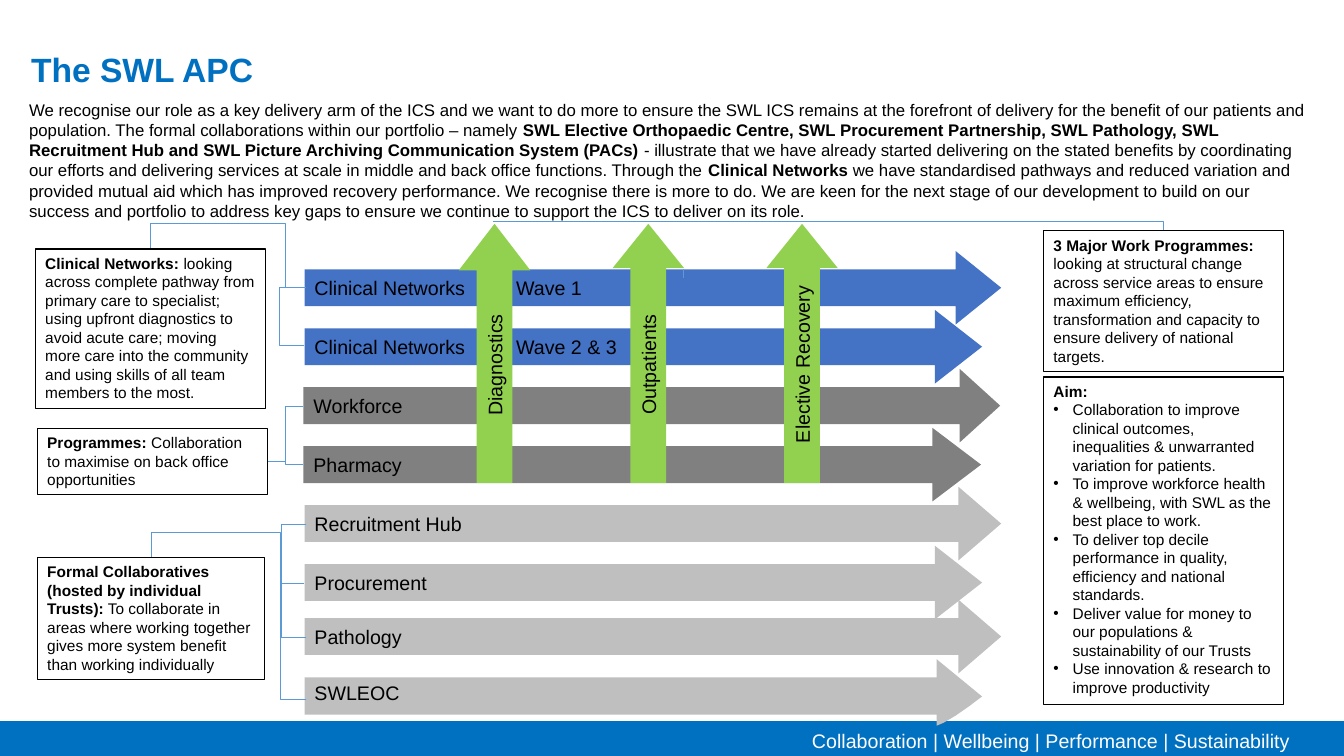
"""Build the SWL APC slide: programme arrows, cross-cutting themes and explanatory boxes."""
from dataclasses import dataclass
from typing import Optional

from lxml import etree
from pptx import Presentation
from pptx import util as u
from pptx.dml.color import RGBColor
from pptx.enum import shapes, text
from pptx.oxml import ns

CELL = u.Inches(7.5) / 90


@dataclass(frozen=True)
class Theme:
    face: str = "Arial"
    ink: str = "000000"
    paper: str = "FFFFFF"
    brand: str = "0070C0"
    network: str = "4472C4"
    programme: str = "808080"
    collaborative: str = "BFBFBF"
    theme_arrow: str = "92D050"
    link: str = "5B9BD5"
    title: int = 24
    label: int = 14
    body: int = 12
    note: int = 11


THEME = Theme()


@dataclass(frozen=True)
class Span:
    words: str
    bold: bool = False


@dataclass(frozen=True)
class Area:
    column: float
    row: float
    columns: float
    rows: float

    def emu(self) -> tuple[int, ...]:
        return tuple(cells(v) for v in (self.column, self.row, self.columns, self.rows))


@dataclass(frozen=True)
class Stream:
    label: str
    colour: str
    column: float
    columns: float
    head: float


@dataclass(frozen=True)
class CrossTheme:
    label: str
    head: float


@dataclass(frozen=True)
class Note:
    area: Area
    spans: tuple[Span, ...]
    bullets: tuple[str, ...] = ()
    fill: Optional[str] = None


@dataclass(frozen=True)
class Link:
    start: tuple[float, float]
    end: tuple[float, float]
    turn_column: Optional[float] = None
    turn_row: Optional[float] = None


WIDE, NARROW, WAVE_TAB = 82.92, 80.64, 24
STREAM_TOP, STREAM_STEP, STREAM_ROWS, LATE_LIFT = 29.88, 7.02, 8.76, 0.6
STREAMS = (
    Stream("Clinical Networks\tWave 1", THEME.network, 36.24, WIDE, 0.62),
    Stream("Clinical Networks\tWave 2 & 3", THEME.network, 36.24, NARROW, 0.64),
    Stream("Workforce", THEME.programme, 36.12, WIDE, 0.55),
    Stream("Pharmacy", THEME.programme, 36.12, NARROW, 0.66),
    Stream("Recruitment Hub", THEME.collaborative, 36.24, WIDE, 0.58),
    Stream("Procurement", THEME.collaborative, 36.24, NARROW, 0.64),
    Stream("Pathology", THEME.collaborative, 36.24, WIDE, 0.58),
)
LAST_STREAM_OUTLINE = (
    (36.24, 80.64), (111.48, 80.64), (111.48, 78.48), (116.88, 82.92), (115.36, 84.07),
    (113.73, 85.2), (112.32, 86.04), (111.48, 86.4), (111.48, 85.08), (36.24, 85.08),
)
CROSS_LEFT, CROSS_STEP = 43.44, 18.3
CROSS_THEMES = (CrossTheme("Diagnostics", 0.65), CrossTheme("Outpatients", 0.62),
                CrossTheme("Elective Recovery", 0.62))
LINKS = (
    Link((58.68, 26.4), (138.48, 29.52)),
    Link((36.24, 34.2), (17.88, 29.64), 33.96, 26.64),
    Link((36.24, 75.84), (18, 66.36), 33.36, 63.36),
    Link((36.48, 75.84), (36.24, 69.48), 33.48),
    Link((36.48, 83.28), (36.24, 75.84), 33.36),
    Link((36.48, 62.4), (36.24, 69.48), 33.48),
    Link((36.48, 34.2), (36.24, 41.16), 33.24),
    Link((36.12, 48.36), (31.92, 54.96), 33.96),
    Link((36.12, 55.32), (31.92, 54.96), 33.96),
    Link((81.36, 33), (81.24, 32.04), 81.3),
)
NOTES = (
    Note(Area(4.2, 29.64, 27.36, 18.96), (
        Span("Clinical Networks: ", True),
        Span("looking across complete pathway from primary care to specialist; using upfront diagnostics to avoid "
             "acute care; moving more care into the community and using skills of all team members to the most."))),
    Note(Area(4.44, 51, 27.36, 7.92), (
        Span("Programmes: ", True), Span("Collaboration to maximise on back office opportunities"))),
    Note(Area(4.44, 66.36, 27, 14.52), (
        Span("Formal Collaboratives (hosted by individual Trusts):", True),
        Span(" To collaborate in areas where working together gives more system benefit than working individually"))),
    Note(Area(124.2, 44.88, 28.56, 39), (Span("Aim:", True),), (
        "Collaboration to improve clinical outcomes, inequalities & unwarranted variation for patients.",
        "To improve workforce health & wellbeing, with SWL as the best place to work.",
        "To deliver top decile performance in quality, efficiency and national standards.",
        "Deliver value for money to our populations & sustainability of our Trusts",
        "Use innovation & research to improve productivity")),
    Note(Area(124.2, 27.48, 28.56, 16.8), (
        Span("3 Major Work Programmes: ", True),
        Span("looking at structural change across service areas to ensure maximum efficiency, transformation and "
             "capacity to ensure delivery of national targets.")), fill=THEME.paper),
)
INTRO = (
    Span("We recognise our role as a key delivery arm of the ICS and we want to do more to ensure the SWL ICS remains "
         "at the forefront of delivery for the benefit of our patients and population. The formal collaborations "
         "within our portfolio – namely "),
    Span("SWL Elective Orthopaedic Centre, SWL Procurement Partnership, SWL Pathology, SWL Recruitment Hub and SWL "
         "Picture Archiving Communication System (PACs)", True),
    Span(" - illustrate that we have already started delivering on the stated benefits by coordinating our efforts "
         "and delivering services at scale in middle and back office functions. Through the "),
    Span("Clinical Networks ", True),
    Span("we have standardised pathways and reduced variation and provided mutual aid which has improved recovery "
         "performance. We recognise there is more to do. We are keen for the next stage of our development to build "
         "on our success and portfolio to address key gaps to ensure we continue to support the ICS to deliver on "
         "its role."),
)


def cells(count: float) -> int:
    return round(count * CELL)


def paint(shape, colour: str) -> None:
    shape.shadow.inherit = False
    shape.fill.solid()
    shape.fill.fore_color.rgb = RGBColor.from_string(colour)
    shape.line.fill.background()


def write(para, spans, size: int, colour: str = THEME.ink, align=text.PP_ALIGN.LEFT) -> None:
    para.alignment = align
    for item in spans:
        span = para.add_run()
        span.text = item.words
        span.font.name, span.font.size, span.font.bold = THEME.face, u.Pt(size), item.bold
        span.font.color.rgb = RGBColor.from_string(colour)


def add_box(page, area: Area, spans, size: int, colour: str = THEME.ink, align=text.PP_ALIGN.LEFT):
    box = page.shapes.add_textbox(*area.emu())
    box.text_frame.word_wrap = True
    write(box.text_frame.paragraphs[0], spans, size, colour, align)
    return box


def label(shape, words: str, align=text.PP_ALIGN.LEFT) -> None:
    shape.text_frame.word_wrap = True
    shape.text_frame.vertical_anchor = text.MSO_ANCHOR.MIDDLE
    para = shape.text_frame.paragraphs[0]
    if "\t" in words:
        stops = etree.SubElement(para._p.get_or_add_pPr(), ns.qn("a:tabLst"))
        etree.SubElement(stops, ns.qn("a:tab"), pos=str(cells(WAVE_TAB)), algn="l")
    write(para, (Span(words),), THEME.label, align=align)


def add_arrow(page, area: Area, head: float, colour: str):
    arrow = page.shapes.add_shape(shapes.MSO_SHAPE.RIGHT_ARROW, *area.emu())
    arrow.adjustments[0], arrow.adjustments[1] = 0.5, head
    paint(arrow, colour)
    return arrow


def add_link(page, link: Link) -> None:
    (x1, y1), (x2, y2) = link.start, link.end
    line = page.shapes.add_connector(shapes.MSO_CONNECTOR.ELBOW, *map(cells, (x1, y1, x2, y2)))
    line.line.color.rgb = RGBColor.from_string(THEME.link)
    line.line.width = u.Pt(0.5)
    shares = []
    if link.turn_column is not None:
        shares.append((link.turn_column - x1) / (x2 - x1))
    if link.turn_row is not None:
        shares.append((link.turn_row - y1) / (y2 - y1))
    properties = line._element.spPr
    outline = properties.find(ns.qn("a:prstGeom"))
    outline.set("prst", f"bentConnector{2 + len(shares)}")
    guides = outline.find(ns.qn("a:avLst"))
    for number, share in enumerate(shares, 1):
        etree.SubElement(guides, ns.qn("a:gd"), name=f"adj{number}", fmla=f"val {round(share * 100000)}")
    etree.SubElement(properties, ns.qn("a:effectLst"))


def add_note(page, note: Note) -> None:
    box = add_box(page, note.area, note.spans, THEME.note)
    if note.fill:
        paint(box, note.fill)
    box.line.color.rgb = RGBColor.from_string(THEME.ink)
    box.line.width = u.Pt(0.75)
    for words in note.bullets:
        para = box.text_frame.add_paragraph()
        layout = para._p.get_or_add_pPr()
        layout.set("marL", str(u.Inches(0.19)))
        layout.set("indent", str(-u.Inches(0.19)))
        etree.SubElement(layout, ns.qn("a:buFont"), typeface=THEME.face)
        etree.SubElement(layout, ns.qn("a:buChar"), char="•")
        write(para, (Span(words),), THEME.note)


def main() -> None:
    deck = Presentation()
    deck.slide_width, deck.slide_height = u.Inches(13.33), u.Inches(7.5)
    page = deck.slides.add_slide(deck.slide_layouts[6])
    footer = page.shapes.add_shape(shapes.MSO_SHAPE.RECTANGLE, *Area(0, 85.92, 159.96, 4.08).emu())
    paint(footer, THEME.brand)
    footer.line.color.rgb = RGBColor.from_string(THEME.brand)
    footer.line.width = u.Pt(1)
    add_box(page, Area(91.44, 86.16, 67.32, 4.08),
            (Span("Collaboration | Wellbeing | Performance | Sustainability"),),
            THEME.label, THEME.paper, text.PP_ALIGN.CENTER)
    title = add_box(page, Area(2.52, 5.28, 121.68, 6), (Span("The SWL APC", True),), THEME.title, THEME.brand)
    title.text_frame.vertical_anchor = text.MSO_ANCHOR.BOTTOM
    title.text_frame.paragraphs[0].line_spacing = 0.9
    for place, stream in enumerate(STREAMS):
        row = STREAM_TOP + place * STREAM_STEP - (LATE_LIFT if place > 5 else 0)
        area = Area(stream.column, row, stream.columns, STREAM_ROWS)
        label(add_arrow(page, area, stream.head, stream.colour), stream.label)
    first, *rest = [(cells(x), cells(y)) for x, y in LAST_STREAM_OUTLINE]
    builder = page.shapes.build_freeform(*first)
    builder.add_line_segments(rest, close=True)
    last_stream = builder.convert_to_shape()
    paint(last_stream, THEME.collaborative)
    label(last_stream, "SWLEOC")
    for place, cross in enumerate(CROSS_THEMES):
        area = Area(CROSS_LEFT + place * CROSS_STEP, 37.8, 30.84, 8.52)
        arrow = add_arrow(page, area, cross.head, THEME.theme_arrow)
        arrow.rotation = 270
        label(arrow, cross.label, text.PP_ALIGN.CENTER)
    add_box(page, Area(2.28, 11.28, 155.52, 15.72), INTRO, THEME.body)
    for link in LINKS:
        add_link(page, link)
    for note in NOTES:
        add_note(page, note)
    deck.save("out.pptx")


if __name__ == "__main__":
    main()
